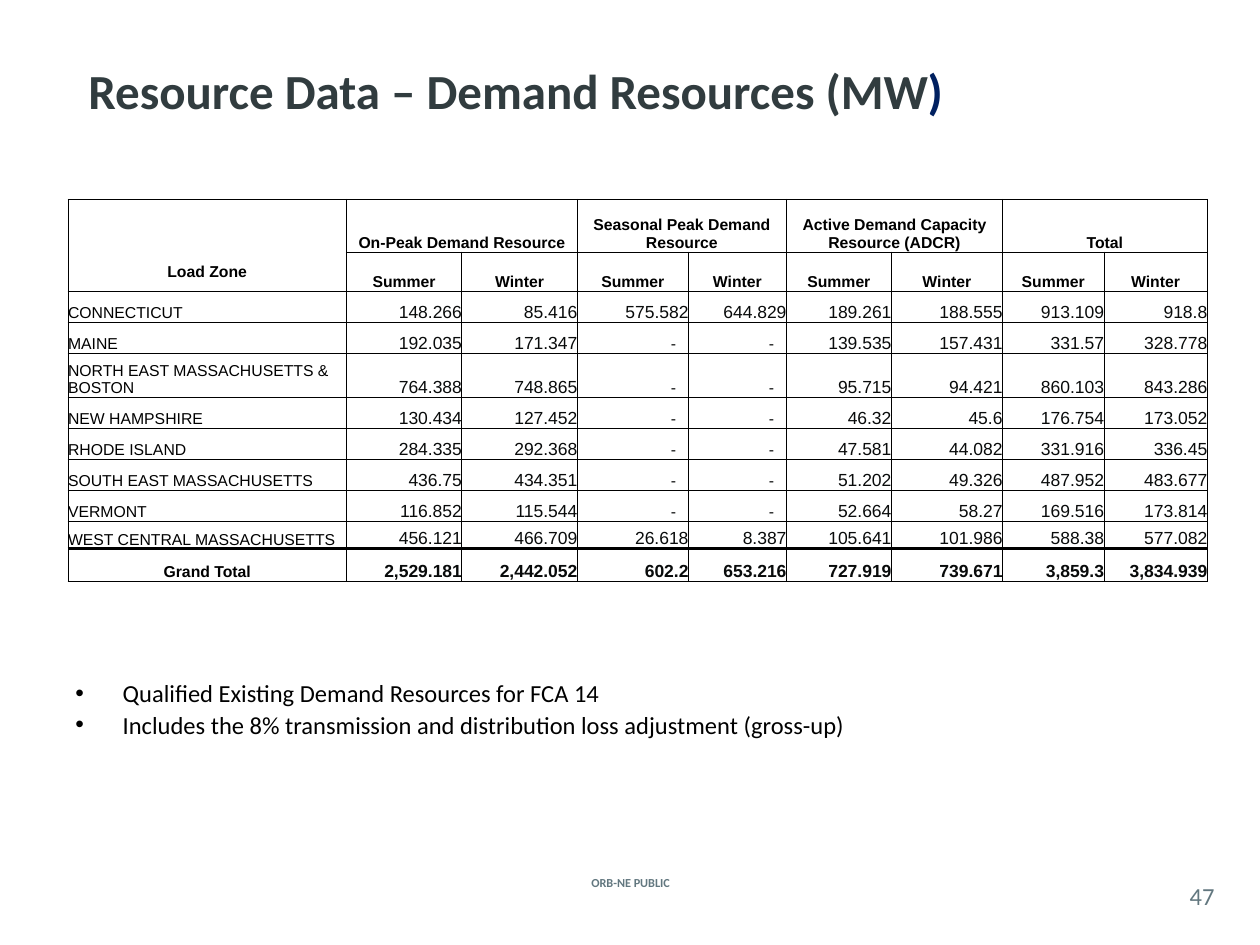
from lxml.etree import SubElement
from pptx import Presentation
from pptx.dml.color import RGBColor
from pptx.enum.text import MSO_ANCHOR, PP_ALIGN
from pptx.oxml.ns import qn
from pptx.util import Pt

BLACK, WHITE, NUMBER, SLATE = "000000", "FFFFFF", "090B0B", "62777F"
COLS = [159, 66, 66, 63.5, 56, 60, 63.5, 58, 59]
ROWS = [30.2, 22.4, 17.7, 17.7, 25.3, 17.7, 17.7, 17.7, 17.7, 15.6, 18.8]
GROUPS = ["On-Peak Demand Resource", "Seasonal Peak Demand Resource",
          "Active Demand Capacity Resource (ADCR)", "Total"]
DASH = " - "
ZONES = [
    ["CONNECTICUT", "148.266", "85.416", "575.582", "644.829", "189.261", "188.555", "913.109", "918.8"],
    ["MAINE", "192.035", "171.347", DASH, DASH, "139.535", "157.431", "331.57", "328.778"],
    ["NORTH EAST MASSACHUSETTS & BOSTON", "764.388", "748.865", DASH, DASH, "95.715", "94.421", "860.103", "843.286"],
    ["NEW HAMPSHIRE", "130.434", "127.452", DASH, DASH, "46.32", "45.6", "176.754", "173.052"],
    ["RHODE ISLAND", "284.335", "292.368", DASH, DASH, "47.581", "44.082", "331.916", "336.45"],
    ["SOUTH EAST MASSACHUSETTS", "436.75", "434.351", DASH, DASH, "51.202", "49.326", "487.952", "483.677"],
    ["VERMONT", "116.852", "115.544", DASH, DASH, "52.664", "58.27", "169.516", "173.814"],
    ["WEST CENTRAL MASSACHUSETTS", "456.121", "466.709", "26.618", "8.387", "105.641", "101.986", "588.38", "577.082"],
    ["Grand Total", "2,529.181", "2,442.052", "602.2", "653.216", "727.919", "739.671", "3,859.3", "3,834.939"],
]


def rgb(color):
    return RGBColor.from_string(color)


def add_text(p, text, size=9, color=BLACK, bold=False, font="Calibri", align=PP_ALIGN.LEFT):
    p.alignment = align
    r = p.add_run()
    r.text = text
    r.font.name, r.font.size, r.font.bold = font, Pt(size), bold
    r.font.color.rgb = rgb(color)


def add_box(s, box, anchor=MSO_ANCHOR.MIDDLE, insets=(7.2, 3.6)):
    tf = s.shapes.add_textbox(*map(Pt, box)).text_frame
    tf.word_wrap = True
    tf.vertical_anchor = anchor
    tf.margin_left = tf.margin_right = Pt(insets[0])
    tf.margin_top = tf.margin_bottom = Pt(insets[1])
    return tf


def add_title(s, box):
    p = add_box(s, box, insets=(8, 4)).paragraphs[0]
    add_text(p, "Resource Data – Demand Resources (MW", size=28, color="313C3F", bold=True)
    add_text(p, ")", size=28, color="002060", bold=True)


def add_bullets(s, box, lines):
    tf = add_box(s, box, MSO_ANCHOR.TOP)
    for i, line in enumerate(lines):
        p = tf.add_paragraph() if i else tf.paragraphs[0]
        pPr = p._p.get_or_add_pPr()
        pPr.set("marL", str(Pt(27)))
        pPr.set("indent", str(Pt(-27)))
        SubElement(pPr, qn("a:buFont"), typeface="Arial")
        SubElement(pPr, qn("a:buChar"), char="•")
        p.space_before = Pt(1.4 if i else 0)
        add_text(p, line, size=14)


def add_footer(s, box, text, size, bold=False, insets=(7.2, 3.6)):
    p = add_box(s, box, insets=insets).paragraphs[0]
    add_text(p, text, size=size, color=SLATE, bold=bold, align=PP_ALIGN.CENTER)


def set_borders(cell, widths):
    tcPr = cell._tc.get_or_add_tcPr()
    for i, (side, width) in enumerate(widths.items()):
        ln = tcPr.makeelement(qn(f"a:ln{side}"), {"w": str(Pt(width))})
        if width:
            fill = SubElement(ln, qn("a:solidFill"))
            SubElement(fill, qn("a:srgbClr"), val=BLACK)
        else:
            SubElement(ln, qn("a:noFill"))
        tcPr.insert(i, ln)


def cell_format(row, col, text):
    center = {"align": PP_ALIGN.CENTER, "bold": True}
    last = len(ROWS) - 1
    if row < 2 or (row == last and col == 0):
        return center
    if col == 0:
        return {}
    size = 9 if text == DASH else 10
    return {"align": PP_ALIGN.RIGHT, "size": size, "color": NUMBER, "bold": row == last}


def add_resource_table(s, box):
    table = s.shapes.add_table(len(ROWS), len(COLS), *map(Pt, box)).table
    table.first_row = table.horz_banding = False
    for column, width in zip(table.columns, COLS):
        column.width = Pt(width)
    for row, height in zip(table.rows, ROWS):
        row.height = Pt(height)
    groups = [""]
    for group in GROUPS:
        groups += [group, ""]
    seasons = ["Load Zone"] + ["Summer", "Winter"] * len(GROUPS)
    total = len(ROWS) - 1
    for i, values in enumerate([groups, seasons] + ZONES):
        for j, text in enumerate(values):
            cell = table.cell(i, j)
            cell.margin_left = cell.margin_right = cell.margin_top = cell.margin_bottom = 0
            cell.vertical_anchor = MSO_ANCHOR.BOTTOM
            if text == DASH:
                cell.margin_right = Pt(4.5)
            if text:
                add_text(cell.text_frame.paragraphs[0], text, font="Arial", **cell_format(i, j, text))
            widths = dict.fromkeys("LRTB", 0.5)
            if i == total:
                widths["T"] = 2
            if i == total - 1:
                widths["B"] = 2
            if j == 0 and i < 2:
                widths["B" if i == 0 else "T"] = 0
                cell.fill.solid()
                cell.fill.fore_color.rgb = rgb(WHITE)
            else:
                cell.fill.background()
            set_borders(cell, widths)
    table.cell(1, 0).vertical_anchor = MSO_ANCHOR.MIDDLE
    for j in range(1, len(COLS), 2):
        table.cell(0, j).merge(table.cell(0, j + 1))


def main():
    prs = Presentation()
    prs.slide_width, prs.slide_height = Pt(720), Pt(540)
    s = prs.slides.add_slide(prs.slide_layouts[6])
    add_footer(s, (307.5, 498.2, 105.8, 12.2), "ORB-NE PUBLIC", 7, bold=True)
    add_footer(s, (671.8, 501.1, 30.2, 20.9), "47", 14, insets=(0, 0))
    add_title(s, (42.5, 0, 653.8, 102.2))
    add_bullets(s, (36, 383.8, 653.8, 77.8), [
        "Qualified Existing Demand Resources for FCA 14",
        "Includes the 8% transmission and distribution loss adjustment (gross-up)",
    ])
    add_resource_table(s, (38.9, 113.8, sum(COLS), sum(ROWS)))
    prs.save("out.pptx")


if __name__ == "__main__":
    main()
